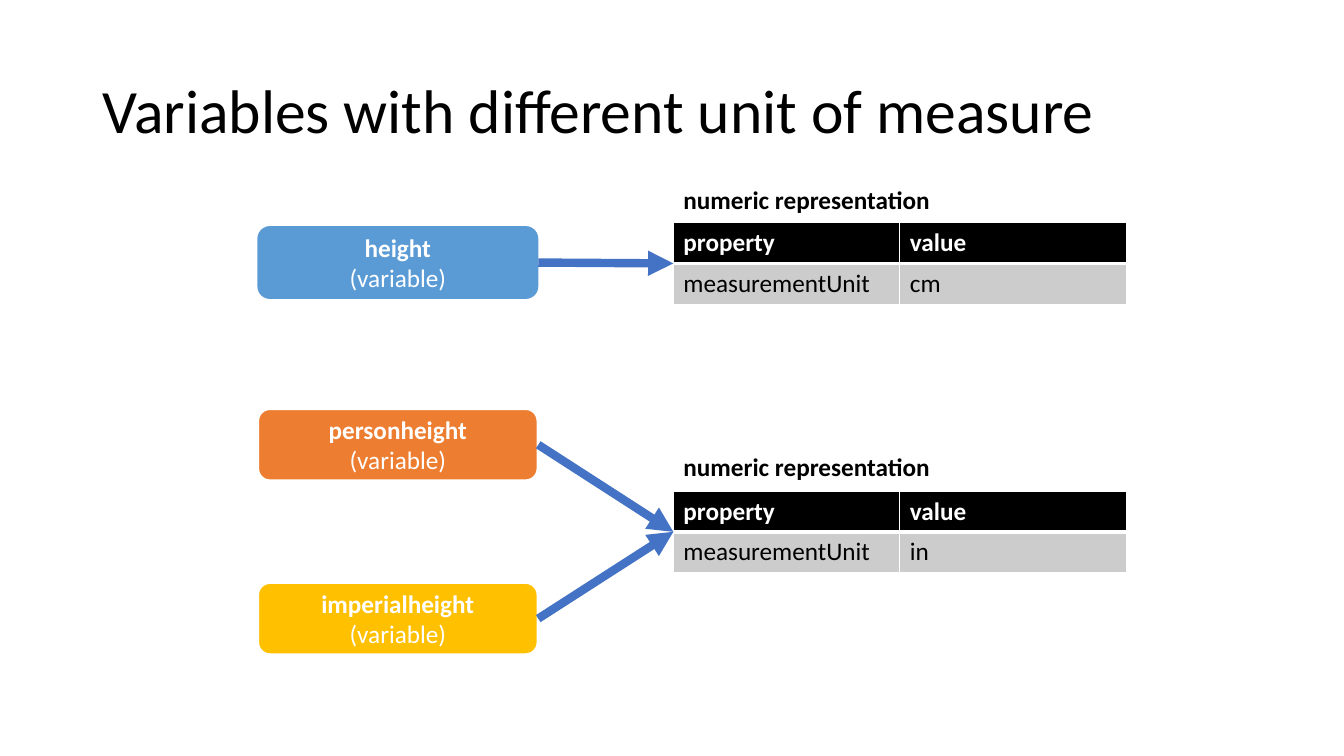
from lxml.etree import SubElement as Sub
from pptx import Presentation
from pptx.dml.color import RGBColor as RGB
from pptx.enum.shapes import MSO_CONNECTOR as Link, MSO_SHAPE as Form
from pptx.enum.text import MSO_ANCHOR as Anchor, PP_ALIGN as Align
from pptx.oxml.ns import qn
from pptx.util import Inches, Pt

HUES = {
    "black": "000000",
    "white": "FFFFFF",
    "grey": "CCCCCC",
    "blue": "5B9BD5",
    "orange": "ED7D31",
    "gold": "FFC000",
    "arrow": "4472C4",
}


def hue(name):
    """Return the colour with this name."""
    return RGB.from_string(HUES[name])


def write(frame, text, size=18, color="black", bold=False, font="Calibri",
          align=Align.LEFT, space=1.0):
    """Write lines into a frame; bold applies to the first line only."""
    para = frame.paragraphs[0]
    para.alignment, para.line_spacing = align, space
    for row, line in enumerate(text.split("\n")):
        if row:
            para.add_line_break()
        run = para.add_run()
        run.text = line
        run.font.name, run.font.size = font, Pt(size)
        run.font.bold = bold and row == 0
        run.font.color.rgb = hue(color)


class Board:
    """Hold the style and the slide; lengths are percent of slide size."""

    row = 5.4
    box_x, box_w, box_h = 19.2, 20.8, 9.46
    tab_x, tab_w, cap_w = 50.1, 33.7, 21.6

    def __init__(self):
        """Open a deck with one blank slide."""
        self.deck = Presentation()
        self.deck.slide_width = Inches(13.33)
        self.deck.slide_height = Inches(7.5)
        self.slide = self.deck.slides.add_slide(self.deck.slide_layouts[6])
        self.shapes = self.slide.shapes

    def place(self, *spots):
        """Turn alternating x and y percents into lengths."""
        sides = self.deck.slide_width, self.deck.slide_height
        return [round(sides[i % 2] * spot / 100) for i, spot in enumerate(spots)]

    def title(self, text):
        """Add the slide heading."""
        frame = self.shapes.add_textbox(*self.place(6.9, 5.33, 91.5, 19.33)).text_frame
        frame.word_wrap = True
        frame.vertical_anchor = Anchor.MIDDLE
        write(frame, text, size=44, space=0.9)

    def box(self, name, y, fill, edge="white", width=1.5):
        """Add a variable box."""
        area = self.place(self.box_x, y, self.box_w, self.box_h)
        shape = self.shapes.add_shape(Form.ROUNDED_RECTANGLE, *area)
        shape.shadow.inherit = False
        shape.fill.solid()
        shape.fill.fore_color.rgb = hue(fill)
        shape.line.color.rgb = hue(edge)
        shape.line.width = Pt(width)
        shape.text_frame.vertical_anchor = Anchor.MIDDLE
        write(shape.text_frame, f"{name}\n(variable)", color="white", bold=True,
              align=Align.CENTER)

    def edge(self, cell, **widths):
        """Draw white cell borders, 1 point unless given."""
        props = cell._tc.get_or_add_tcPr()
        for side in "LRTB":
            line = Sub(props, qn(f"a:ln{side}"), w=str(Pt(widths.get(side, 1))))
            Sub(Sub(line, qn("a:solidFill")), qn("a:srgbClr"), val=HUES["white"])

    def table(self, x, y, width, rows, looks):
        """Add a table whose rows each have a fill, ink, weight and borders."""
        area = self.place(x, y, width, self.row * len(rows))
        grid = self.shapes.add_table(len(rows), len(rows[0]), *area).table
        grid.horz_banding = False
        for i, (texts, (fill, ink, bold, widths)) in enumerate(zip(rows, looks)):
            for j, text in enumerate(texts):
                cell = grid.cell(i, j)
                self.edge(cell, **widths)
                if fill:
                    cell.fill.solid()
                    cell.fill.fore_color.rgb = hue(fill)
                else:
                    cell.fill.background()
                write(cell.text_frame, text, color=ink, bold=bold)

    def measure(self, unit, y, cap_y):
        """Add a caption and the table for one unit."""
        self.table(self.tab_x, cap_y, self.cap_w, [["numeric representation"]],
                   [(None, "black", True, {"B": 3})])
        self.table(self.tab_x, y, self.tab_w,
                   [["property", "value"], ["measurementUnit", unit]],
                   [("black", "white", True, {"B": 3}),
                    ("grey", "black", False, {"T": 3})])

    def arrow(self, box_y, tab_y):
        """Join a box to the middle of a table's left side."""
        ends = self.place(self.box_x + self.box_w + 0.05, box_y + self.box_h / 2,
                          self.tab_x, tab_y + self.row)
        link = self.shapes.add_connector(Link.STRAIGHT, *ends)
        link.line.color.rgb = hue("arrow")
        link.line.width = Pt(6)
        Sub(link.line._get_or_add_ln(), qn("a:tailEnd"), type="triangle")
        Sub(link._element.spPr, qn("a:effectLst"))


def main():
    """Build and save the slide."""
    board = Board()
    board.title("Variables with different unit of measure")
    metric, inch = 29.45, 64.95
    board.measure("cm", metric, 23.9)
    board.measure("in", inch, 59.2)
    board.box("height", 30, "blue", edge="blue", width=1)
    board.box("personheight", 54.1, "orange")
    board.box("imperialheight", 77.1, "gold")
    for box_y, tab_y in ((30, metric), (54.1, inch), (77.1, inch)):
        board.arrow(box_y, tab_y)
    board.deck.save("out.pptx")


if __name__ == "__main__":
    main()
